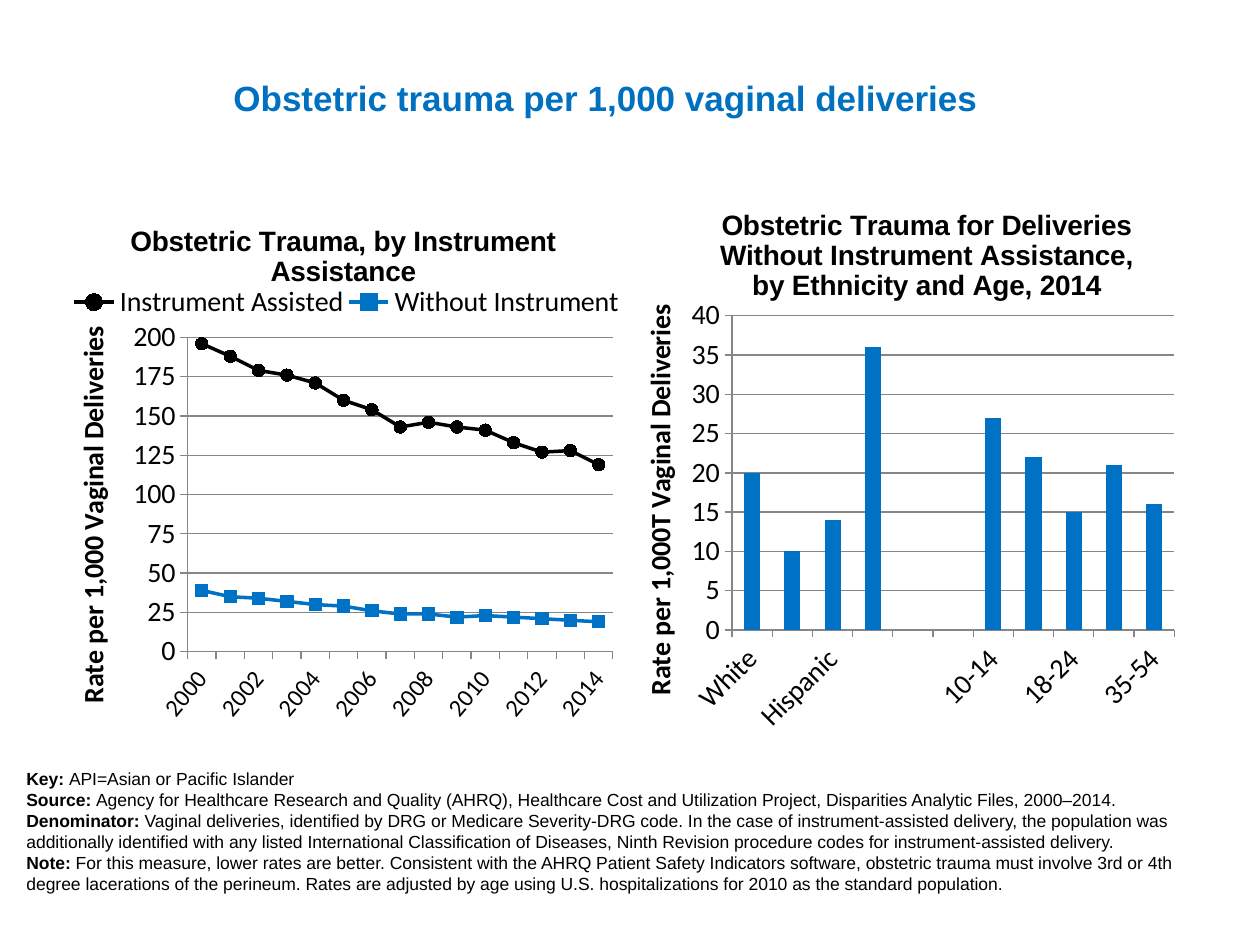
"""Build the obstetric trauma slide with a trend chart, a group chart and notes."""
import pptx
import pptx.chart.data
import pptx.dml.color
import pptx.enum.chart
import pptx.enum.text
import pptx.oxml
import pptx.oxml.ns
import pptx.util

THEME = {
    "heading": "0070C0", "text": "000000", "accent": "0072C6", "grid": "868686",
    "sans": "Arial", "label": "Calibri",
    "heading_size": 20, "chart_size": 16, "year_size": 14, "note_size": 10,
}
HEADING = "Obstetric trauma per 1,000 vaginal deliveries"
NOTES = [
    ("Key: ", "API=Asian or Pacific Islander"),
    ("Source: ", "Agency for Healthcare Research and Quality (AHRQ), Healthcare Cost and Utilization Project, "
     "Disparities Analytic Files, 2000–2014."),
    ("Denominator: ", "Vaginal deliveries, identified by DRG or Medicare Severity-DRG code. In the case of "
     "instrument-assisted delivery, the population was additionally identified with any listed International "
     "Classification of Diseases, Ninth Revision procedure codes for instrument-assisted delivery."),
    ("Note: ", "For this measure, lower rates are better. Consistent with the AHRQ Patient Safety Indicators "
     "software, obstetric trauma must involve 3rd or 4th degree lacerations of the perineum. Rates are adjusted "
     "by age using U.S. hospitalizations for 2010 as the standard population."),
]
TREND = {
    "kind": pptx.enum.chart.XL_CHART_TYPE.LINE_MARKERS,
    "box": (63, 202, 567, 542),
    "title": "Obstetric Trauma, by Instrument Assistance", "title_at": (0.11, 0.03),
    "axis": "Rate per 1,000 Vaginal Deliveries", "axis_at": (0.01, 0.22),
    "max": 200, "step": 25, "plot": (0.22, 0.25, 0.75, 0.58),
    "label_size": THEME["year_size"], "turn": -50,
    "categories": [str(year) for year in range(2000, 2015)],
    "series": [
        ("Instrument Assisted", [196, 188, 179, 176, 171, 160, 154, 143, 146, 143, 141, 133, 127, 128, 119]),
        ("Without Instrument", [39, 35, 34, 32, 30, 29, 26, 24, 24, 22, 23, 22, 21, 20, 19]),
    ],
}
GROUPS = {
    "kind": pptx.enum.chart.XL_CHART_TYPE.COLUMN_CLUSTERED,
    "box": (630, 202, 567, 542),
    "title": "Obstetric Trauma for Deliveries Without Instrument Assistance, by Ethnicity and Age, 2014",
    "title_at": (0.15, 0),
    "axis": "Rate per 1,000T Vaginal Deliveries", "axis_at": (0.01, 0.18),
    "max": 40, "step": 5, "plot": (0.18, 0.21, 0.78, 0.58),
    "label_size": THEME["chart_size"], "turn": -45,
    "categories": ["White", "Black", "Hispanic", "API", "", "", "10-14", "15-17", "18-24", "25-34", "35-54"],
    "series": [("Series 1", [20, 10, 14, 36, None, None, 27, 22, 15, 21, 16])],
}
MARKERS = [
    (pptx.enum.chart.XL_MARKER_STYLE.CIRCLE, THEME["text"]),
    (pptx.enum.chart.XL_MARKER_STYLE.SQUARE, THEME["accent"]),
]


def px(length):
    return round(length * 914400 / 126)


def rgb(color):
    return pptx.dml.color.RGBColor.from_string(color)


def style(font, size, face, bold=False, color=THEME["text"]):
    font.size, font.name, font.bold = pptx.util.Pt(size), face, bold
    font.color.rgb = rgb(color)


def paint(fmt, color):
    fmt.fill.solid()
    fmt.fill.fore_color.rgb = rgb(color)


def place(element, values, after=None, inner=False):
    for old in element.findall(pptx.oxml.ns.qn("c:layout")):
        element.remove(old)
    names = ("x", "y", "w", "h")[:len(values)]
    modes = "".join(f'<c:{name}Mode val="edge"/>' for name in names[:2])
    sizes = "".join(f'<c:{name} val="{value}"/>' for name, value in zip(names, values))
    target = '<c:layoutTarget val="inner"/>' if inner else ""
    layout = pptx.oxml.parse_xml(
        f'<c:layout {pptx.oxml.ns.nsdecls("c")}><c:manualLayout>{target}{modes}{sizes}</c:manualLayout></c:layout>')
    if after:
        element.find(pptx.oxml.ns.qn(after)).addnext(layout)
    else:
        element.insert(0, layout)


def add_rate_chart(slide, content):
    data = pptx.chart.data.CategoryChartData(number_format="0")
    data.categories = content["categories"]
    for name, values in content["series"]:
        data.add_series(name, values)
    chart = slide.shapes.add_chart(content["kind"], *map(px, content["box"]), data).chart
    style(chart.font, THEME["note_size"], THEME["sans"])
    chart.has_legend = False
    chart.plots[0].vary_by_categories = False

    chart.chart_title.text_frame.text = content["title"]
    style(chart.chart_title.text_frame.paragraphs[0].runs[0].font, THEME["chart_size"], THEME["sans"], True)
    place(chart.chart_title._element, content["title_at"], "c:tx")
    place(chart._chartSpace.chart.plotArea, content["plot"], inner=True)

    rates, groups = chart.value_axis, chart.category_axis
    rates.minimum_scale, rates.maximum_scale, rates.major_unit = 0, content["max"], content["step"]
    rates.has_major_gridlines = True
    rates.tick_labels.number_format, rates.tick_labels.number_format_is_linked = "0", False
    rates.axis_title.text_frame.text = content["axis"]
    style(rates.axis_title.text_frame.paragraphs[0].runs[0].font, THEME["chart_size"], THEME["label"], True)
    rates.axis_title.text_frame._txBody.bodyPr.set("rot", "-5400000")
    rates.axis_title.text_frame._txBody.bodyPr.set("vert", "horz")
    place(rates.axis_title._element, content["axis_at"], "c:tx")

    for axis, size in ((rates, THEME["chart_size"]), (groups, content["label_size"])):
        axis.major_tick_mark = pptx.enum.chart.XL_TICK_MARK.OUTSIDE
        axis.minor_tick_mark = pptx.enum.chart.XL_TICK_MARK.NONE
        style(axis.tick_labels.font, size, THEME["label"])
        axis.format.line.color.rgb = rgb(THEME["grid"])
    rates.major_gridlines.format.line.color.rgb = rgb(THEME["grid"])
    groups._element.txPr.bodyPr.set("rot", str(content["turn"] * 60000))
    skip = pptx.oxml.parse_xml(f'<c:tickLblSkip {pptx.oxml.ns.nsdecls("c")} val="2"/>')
    groups._element.find(pptx.oxml.ns.qn("c:noMultiLvlLbl")).addprevious(skip)
    return chart


def add_text(slide, box, anchor):
    frame = slide.shapes.add_textbox(*map(px, box)).text_frame
    frame.word_wrap, frame.vertical_anchor = True, anchor
    return frame


def main():
    deck = pptx.Presentation()
    deck.slide_width, deck.slide_height = px(1260), px(945)
    slide = deck.slides.add_slide(deck.slide_layouts[6])

    trend = add_rate_chart(slide, TREND)
    for line, (symbol, color) in zip(trend.plots[0].series, MARKERS):
        line.smooth = False
        line.format.line.color.rgb = rgb(color)
        line.format.line.width = pptx.util.Pt(2)
        line.marker.style, line.marker.size = symbol, 7
        paint(line.marker.format, color)
        line.marker.format.line.color.rgb = rgb(color)
    trend.has_legend = True
    trend.legend.position = pptx.enum.chart.XL_LEGEND_POSITION.TOP
    trend.legend.include_in_layout = False
    style(trend.legend.font, THEME["chart_size"], THEME["label"])
    place(trend.legend._element, (0.01, 0.15, 0.98, 0.07), "c:legendPos")

    notes = add_text(slide, (14, 762, 1227, 140), pptx.enum.text.MSO_ANCHOR.TOP)
    for index, entry in enumerate(NOTES):
        paragraph = notes.add_paragraph() if index else notes.paragraphs[0]
        for part, bold in zip(entry, (True, False)):
            run = paragraph.add_run()
            run.text = part
            style(run.font, THEME["note_size"], THEME["sans"], bold)

    groups = add_rate_chart(slide, GROUPS)
    groups.plots[0].gap_width = 150
    paint(groups.plots[0].series[0].format, THEME["accent"])

    heading = add_text(slide, (221, 37, 976, 120), pptx.enum.text.MSO_ANCHOR.MIDDLE)
    heading.text = HEADING
    style(heading.paragraphs[0].runs[0].font, THEME["heading_size"], THEME["sans"], True, THEME["heading"])
    deck.save("out.pptx")


if __name__ == "__main__":
    main()
